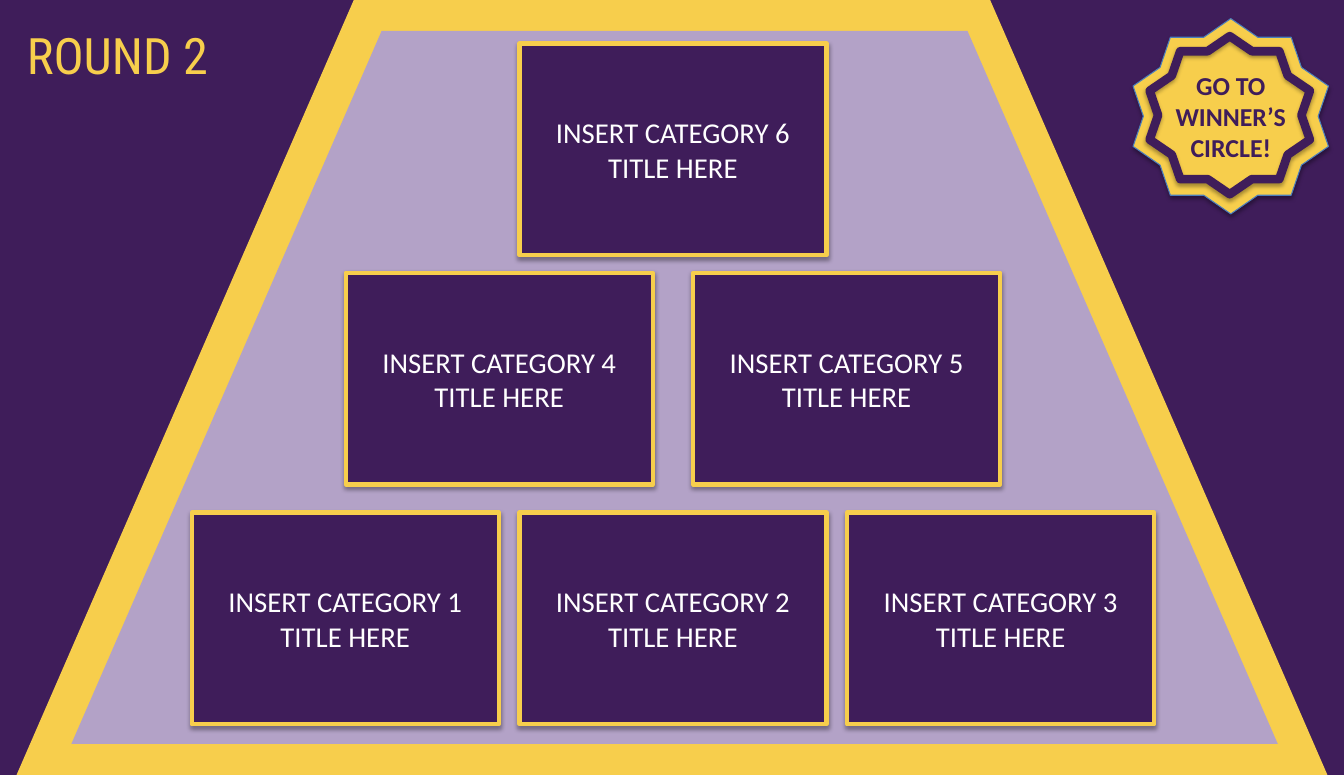
from lxml.etree import SubElement
from pptx import Presentation
from pptx.dml.color import RGBColor
from pptx.enum.shapes import MSO_SHAPE as Shape
from pptx.enum.text import MSO_ANCHOR as Anchor, PP_ALIGN as Align
from pptx.oxml.ns import qn
from pptx.util import Inches, Pt

PURPLE = RGBColor(0x3F, 0x1D, 0x5A)
GOLD = RGBColor(0xF7, 0xCE, 0x4C)
LILAC = RGBColor(0xB3, 0xA2, 0xC7)
BLUE = RGBColor(0x4B, 0x7E, 0xBC)
WHITE = RGBColor(0xFF, 0xFF, 0xFF)

# Content
TITLE = "ROUND 2"
BADGE_LINES = ["GO TO", "WINNER’S CIRCLE!"]
# Pyramid rows: top, distance between card lefts, category numbers
ROWS = [
    (0.42, 0, [6]),
    (2.64, 3.36, [4, 5]),
    (4.96, 3.17, [1, 2, 3]),
]
PYRAMID = [((0.16, 0, 12.68, 7.5), GOLD), ((0.69, 0.3, 11.67, 6.9), LILAC)]
PYRAMID_SLOPE = 0.435
CARD_WIDTH, CARD_HEIGHT = 2.97, 2.05
CENTER = 6.51

TITLE_FONT = {"name": "Roboto Condensed", "size": Pt(35), "bold": False}
CARD_FONT = {"name": "Calibri", "size": Pt(20)}
BADGE_FONT = {"name": "Calibri", "size": Pt(18), "bold": True}


def write(shape, lines, align, anchor, font, color):
    frame = shape.text_frame
    frame.word_wrap = True
    frame.vertical_anchor = anchor
    frame.text = "\n".join(lines)
    for para in frame.paragraphs:
        para.alignment = align
        for span in para.runs:
            for name, value in font.items():
                setattr(span.font, name, value)
            span.font.color.rgb = color


def add_shape(page, kind, place, fill=None, line=None, width=0):
    shape = page.shapes.add_shape(kind, *map(Inches, place))
    shape.shadow.inherit = False
    if fill is None:
        shape.fill.background()
    else:
        shape.fill.solid()
        shape.fill.fore_color.rgb = fill
    if line is None:
        shape.line.fill.background()
    else:
        shape.line.color.rgb = line
        shape.line.width = Pt(width)
    return shape


def add_shadow(shape):
    effects = shape.element.spPr.find(qn("a:effectLst"))
    shadow = SubElement(effects, qn("a:outerShdw"), blurRad=str(Pt(3.1)),
                        dist=str(Pt(1.8)), dir="5400000", rotWithShape="0")
    color = SubElement(shadow, qn("a:srgbClr"), val="000000")
    SubElement(color, qn("a:alpha"), val="35000")


deck = Presentation()
deck.slide_width, deck.slide_height = Inches(13), Inches(7.5)
page = deck.slides.add_slide(deck.slide_layouts[5])
page.background.fill.solid()
page.background.fill.fore_color.rgb = PURPLE

# Title
title = page.shapes.title
title.left, title.top, title.width, title.height = map(Inches, (0.16, 0.18, 2.57, 0.69))
write(title, [TITLE], Align.LEFT, Anchor.TOP, TITLE_FONT, GOLD)

# Pyramid
for place, color in PYRAMID:
    layer = add_shape(page, Shape.TRAPEZOID, place, color)
    layer.adjustments[0] = PYRAMID_SLOPE

# Category cards, each row centred on the pyramid
for top, pitch, numbers in ROWS:
    first = CENTER - (pitch * (len(numbers) - 1) + CARD_WIDTH) / 2
    for index, number in enumerate(numbers):
        place = (first + index * pitch, top, CARD_WIDTH, CARD_HEIGHT)
        card = add_shape(page, Shape.RECTANGLE, place, PURPLE, GOLD, 3)
        add_shadow(card)
        write(card, [f"INSERT CATEGORY {number} TITLE HERE"],
              Align.CENTER, Anchor.MIDDLE, CARD_FONT, WHITE)

# Winner's badge and its inner ring
badge = add_shape(page, Shape.STAR_10_POINT, (10.96, 0.18, 1.89, 1.89), GOLD, BLUE, 0.75)
add_shadow(badge)
write(badge, BADGE_LINES, Align.CENTER, Anchor.MIDDLE, BADGE_FONT, PURPLE)
ring = add_shape(page, Shape.STAR_10_POINT, (11.12, 0.35, 1.55, 1.53), line=PURPLE, width=6)
add_shadow(ring)

deck.save("out.pptx")
